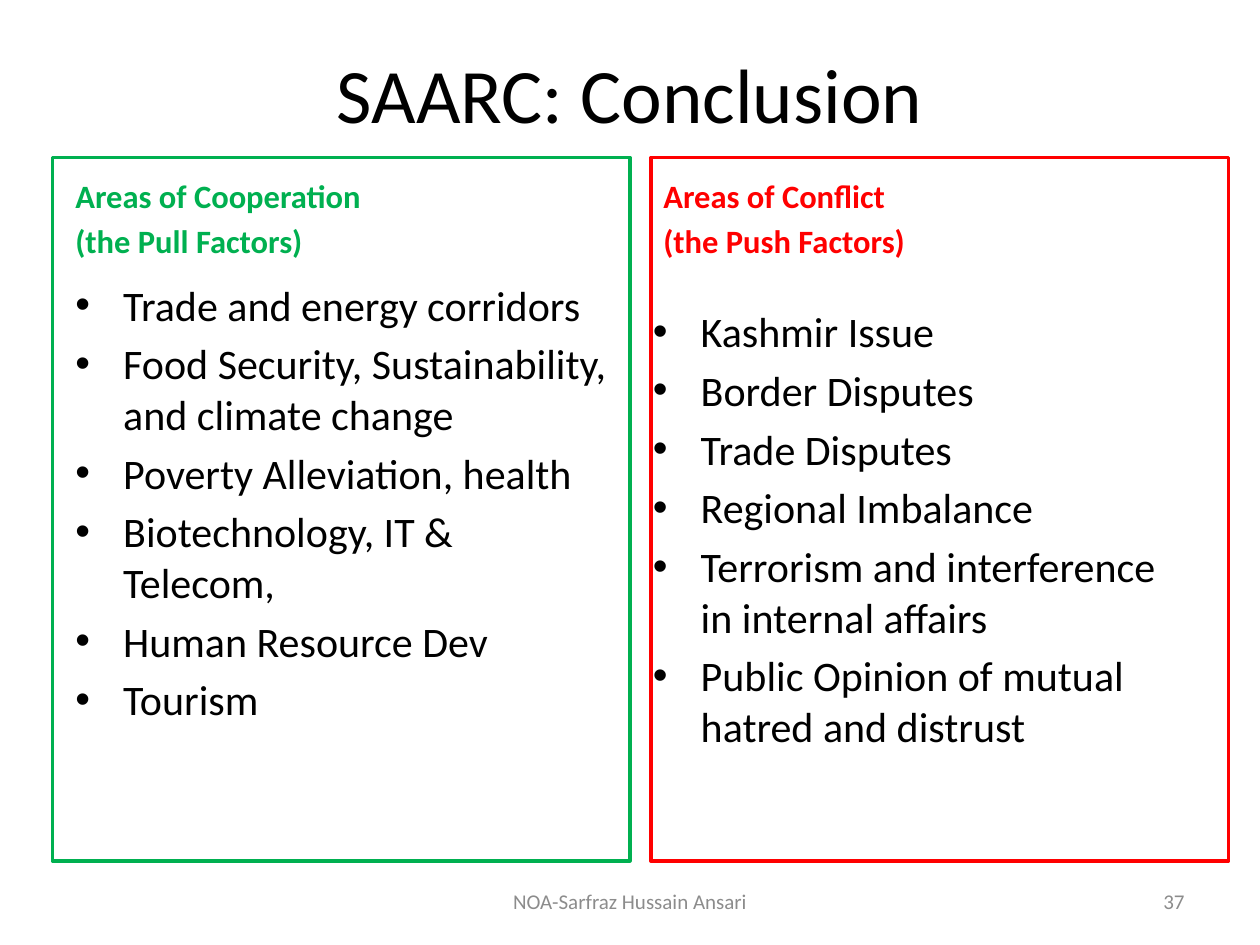
from lxml import etree
from pptx import Presentation
from pptx.dml.color import RGBColor
from pptx.enum.shapes import MSO_SHAPE
from pptx.enum.text import MSO_ANCHOR, PP_ALIGN
from pptx.oxml.ns import qn
from pptx.util import Inches, Pt

LEFT, CENTER, RIGHT = PP_ALIGN.LEFT, PP_ALIGN.CENTER, PP_ALIGN.RIGHT
TOP, MIDDLE, BOTTOM = MSO_ANCHOR.TOP, MSO_ANCHOR.MIDDLE, MSO_ANCHOR.BOTTOM
RECT = MSO_SHAPE.RECTANGLE

COLORS = {"ink": "000000", "pull": "00B050", "push": "FF0000", "gray": "8C8C8C"}
FONT = "Calibri"
COLS, ROWS = 120, 90  # grid cells across and down the slide
WIDTH, HEIGHT = Inches(10), Inches(7.5)
HANG = Inches(0.38)

PULL = ["Trade and energy corridors",
        "Food Security, Sustainability, and climate change",
        "Poverty Alleviation, health",
        "Biotechnology, IT & Telecom,",
        "Human Resource Dev",
        "Tourism"]
PUSH = ["Kashmir Issue",
        "Border Disputes",
        "Trade Disputes",
        "Regional Imbalance",
        "Terrorism and interference in internal affairs",
        "Public Opinion of mutual hatred and distrust"]


def place(box):
    col, row, wide, high = box
    return [round(n) for n in (col * WIDTH / COLS, row * HEIGHT / ROWS,
                               wide * WIDTH / COLS, high * HEIGHT / ROWS)]


def tint(name):
    return RGBColor.from_string(COLORS[name])


def bullet(para):
    props = para._p.get_or_add_pPr()
    props.set("marL", str(HANG))
    props.set("indent", str(-HANG))
    etree.SubElement(props, qn("a:buFont")).set("typeface", "Arial")
    etree.SubElement(props, qn("a:buChar")).set("char", "•")


def write(slide, box, lines, size, color, align=LEFT, anchor=TOP,
          bold=False, gap=0, dots=False):
    frame = slide.shapes.add_textbox(*place(box)).text_frame
    frame.word_wrap = True
    frame.vertical_anchor = anchor
    frame.text = "\n".join(lines)
    for para in frame.paragraphs:
        para.alignment = align
        para.space_before = Pt(gap * size)
        font = para.font
        font.name, font.size, font.bold = FONT, Pt(size), bold
        font.color.rgb = tint(color)
        if dots:
            bullet(para)


def panel(slide, box, color, head, items, shift, drop):
    """Framed column; shift holds the head and list offsets, drop the list's."""
    col, row, wide, high = box
    # Heading and bullet list
    write(slide, (col + shift[0], row + 2, wide - 2, 8.4), head, 18.6, color,
          anchor=BOTTOM, bold=True, gap=0.2)
    write(slide, (col + shift[1], row + drop, wide - 2, high - drop - 2),
          items, 24, "ink", gap=0.2, dots=True)
    # Frame
    frame = slide.shapes.add_shape(RECT, *place(box))
    frame.shadow.inherit = False
    frame.fill.background()
    frame.line.color.rgb = tint(color)
    frame.line.width = Pt(2)


def footer(slide, box):
    col, row, wide, high = box
    write(slide, (col + 35, row, 38, high), ["NOA-Sarfraz Hussain Ansari"],
          12, "gray", CENTER, MIDDLE)
    write(slide, (col + wide - 28, row, 28, high), ["37"],
          12, "gray", RIGHT, MIDDLE)


def main():
    deck = Presentation()
    deck.slide_width, deck.slide_height = WIDTH, HEIGHT
    slide = deck.slides.add_slide(deck.slide_layouts[6])
    write(slide, (6, 3.6, 108, 10.4), ["SAARC: Conclusion"], 44, "ink",
          CENTER, MIDDLE)
    panel(slide, (5, 15, 55, 67), "pull",
          ["Areas of Cooperation", "(the Pull Factors)"], PULL, (1, 1), 11)
    panel(slide, (62, 15, 55, 67), "push",
          ["Areas of Conflict", "(the Push Factors)"], PUSH, (0, -1), 13.5)
    footer(slide, (6, 83.4, 108, 4.8))
    deck.save("out.pptx")


if __name__ == "__main__":
    main()
